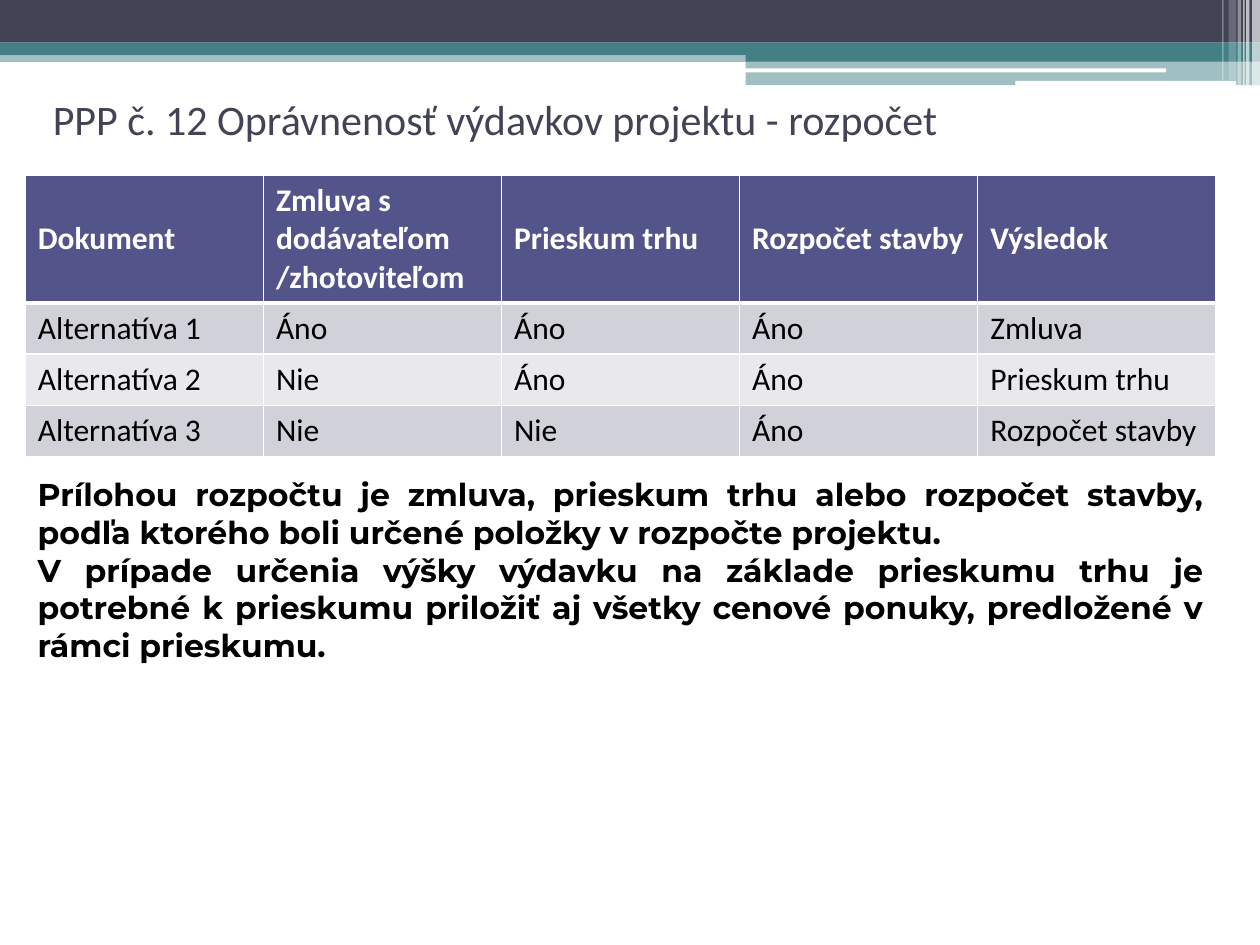
"""Build the slide on eligible project costs, with its budget table."""
from lxml.etree import SubElement
from pptx import Presentation
from pptx.dml.color import RGBColor
from pptx.enum.shapes import MSO_SHAPE
from pptx.enum.text import MSO_ANCHOR, PP_ALIGN
from pptx.oxml.ns import qn
from pptx.util import Cm, Pt

WHITE = RGBColor(0xFF, 0xFF, 0xFF)
BLACK = RGBColor(0, 0, 0)
DARK = RGBColor(0x42, 0x44, 0x56)
TEAL = RGBColor(0x43, 0x80, 0x86)
HEAD = RGBColor(0x53, 0x54, 0x8A)
BANDS = [RGBColor(0xD1, 0xD1, 0xDA), RGBColor(0xE9, 0xE9, 0xED)]

TITLE = "PPP č. 12 Oprávnenosť výdavkov projektu - rozpočet"
ROWS = [
    ["Dokument", "Zmluva s dodávateľom /zhotoviteľom", "Prieskum trhu",
     "Rozpočet stavby", "Výsledok"],
    ["Alternatíva 1", "Áno", "Áno", "Áno", "Zmluva"],
    ["Alternatíva 2", "Nie", "Áno", "Áno", "Prieskum trhu"],
    ["Alternatíva 3", "Nie", "Nie", "Áno", "Rozpočet stavby"],
]
NOTES = [
    "Prílohou rozpočtu je zmluva, prieskum trhu alebo rozpočet stavby, "
    "podľa ktorého boli určené položky v rozpočte projektu.",
    "V prípade určenia výšky výdavku na základe prieskumu trhu je potrebné "
    "k prieskumu priložiť aj všetky cenové ponuky, predložené v rámci prieskumu.",
]
BARS = [
    ((0, 1.02, 25.4, 0.23), TEAL, 50),
    ((0, 0, 25.4, 0.86), DARK, 100),
    ((0, 0.86, 25.4, 0.25), TEAL, 100),
    ((15.03, 0.99, 10.37, 0.25), TEAL, 100),
    ((15.03, 1.23, 10.37, 0.49), TEAL, 50),
]
PILLS = [(15.01, 1.38, 8.5, 0.08), (20.47, 1.63, 4.45, 0.1)]
STRIPES = [
    (25.24, 0.16, 1.73, 65), (25.12, 0.07, 1.73, 65), (25.06, 0.03, 1.73, 60),
    (24.95, 0.07, 1.73, 40), (24.77, 0.15, 1.62, 20), (24.64, 0.03, 1.62, 30),
]
LEFT, WIDE = 0.51, 24
HIGH = [2.52, 1.03, 1.03, 1.03]


def style(para, text, align=PP_ALIGN.LEFT, **form):
    para.text, para.alignment = text, align
    font = para.runs[0].font
    font.color.rgb = form.pop("color")
    for name, value in form.items():
        setattr(font, name, value)


def bar(slide, box, color, alpha=100, kind=MSO_SHAPE.RECTANGLE):
    shape = slide.shapes.add_shape(kind, *map(Cm, box))
    shape.shadow.inherit = False
    shape.fill.solid()
    shape.fill.fore_color.rgb = color
    shape.line.fill.background()
    if alpha < 100:
        tone = shape.fill._xPr.find(".//" + qn("a:srgbClr"))
        SubElement(tone, qn("a:alpha"), val=str(alpha * 1000))


def edge(cell, base):
    props = cell._tc.get_or_add_tcPr()
    for side, width in {"L": 1, "R": 1, "T": 1, "B": base}.items():
        line = SubElement(props, qn("a:ln" + side), w=str(Pt(width)))
        fill = SubElement(line, qn("a:solidFill"))
        SubElement(fill, qn("a:srgbClr"), val=str(WHITE))


def grid(slide):
    box = map(Cm, (LEFT, 3.53, WIDE, sum(HIGH)))
    table = slide.shapes.add_table(len(ROWS), len(ROWS[0]), *box).table
    for col in table.columns:
        col.width = Cm(WIDE / len(ROWS[0]))
    for r, row in enumerate(ROWS):
        table.rows[r].height = Cm(HIGH[r])
        top = r == 0
        for c, text in enumerate(row):
            cell = table.cell(r, c)
            edge(cell, 3 if top or False else 1)
            cell.fill.solid()
            cell.fill.fore_color.rgb = HEAD if top else BANDS[(r - 1) % 2]
            cell.vertical_anchor = MSO_ANCHOR.MIDDLE if top else MSO_ANCHOR.TOP
            style(cell.text_frame.paragraphs[0], text, size=Pt(18), name="Calibri",
                  bold=top, color=WHITE if top else BLACK)


def place(shape, box):
    for name, value in zip(("left", "top", "width", "height"), box):
        setattr(shape, name, Cm(value))


def main():
    deck = Presentation()
    deck.slide_width, deck.slide_height = Cm(25.4), Cm(19.05)
    slide = deck.slides.add_slide(deck.slide_layouts[5])
    for box, color, alpha in BARS:
        bar(slide, box, color, alpha)
    for box in PILLS:
        bar(slide, box, WHITE, kind=MSO_SHAPE.ROUNDED_RECTANGLE)
    for left, width, high, alpha in STRIPES:
        bar(slide, (left, 0, width, high), WHITE, alpha)

    title = slide.shapes.title
    place(title, (0.81, 1.52, 24.1, 1.75))
    title.text_frame.vertical_anchor = MSO_ANCHOR.MIDDLE
    style(title.text_frame.paragraphs[0], TITLE, PP_ALIGN.JUSTIFY,
          size=Pt(24), name="Calibri", color=DARK)

    grid(slide)

    frame = slide.shapes.add_textbox(*map(Cm, (LEFT, 9.45, WIDE, 3.33))).text_frame
    frame.word_wrap = True
    for i, text in enumerate(NOTES):
        para = frame.add_paragraph() if i else frame.paragraphs[0]
        style(para, text, PP_ALIGN.JUSTIFY, size=Pt(18), name="Montserrat",
              bold=True, color=BLACK)
    deck.save("out.pptx")


if __name__ == "__main__":
    main()
